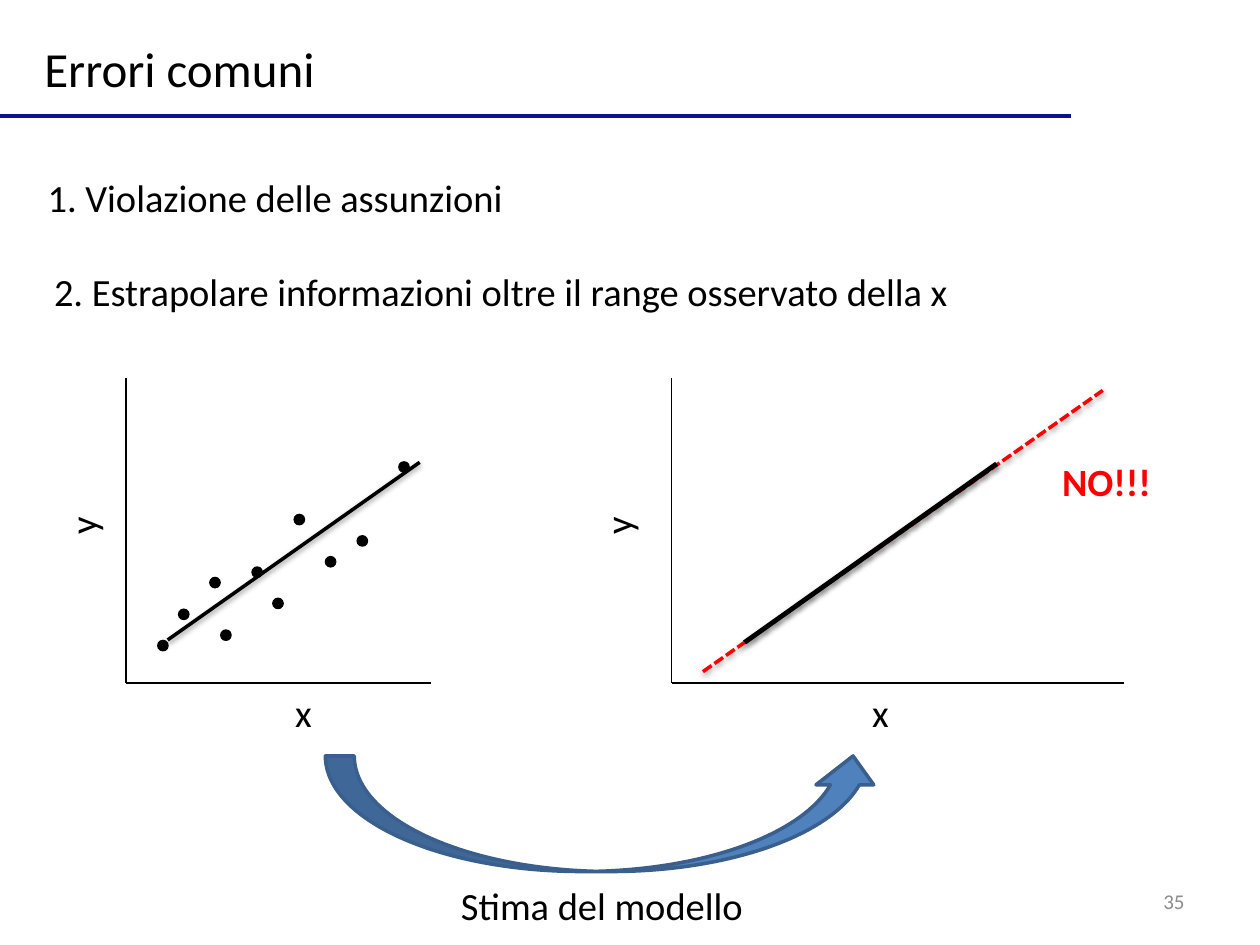
from dataclasses import dataclass

from lxml.etree import SubElement
from pptx import Presentation
from pptx.dml.color import RGBColor
from pptx.enum.dml import MSO_LINE
from pptx.enum.shapes import MSO_CONNECTOR, MSO_SHAPE
from pptx.enum.text import MSO_ANCHOR, MSO_AUTO_SIZE, PP_ALIGN
from pptx.oxml.ns import qn
from pptx.util import Cm, Pt

BLACK, RED = "000000", "FF0000"
AXIS_TOP, AXIS_BOTTOM = 7.62, 13.77
DOT_SIZE = 0.21


@dataclass
class Label:
    text: str
    area: tuple[float, float, float, float]
    size: float = 22
    color: str = BLACK
    bold: bool = False
    align: PP_ALIGN = PP_ALIGN.LEFT
    anchor: MSO_ANCHOR = MSO_ANCHOR.TOP
    wrap: bool = True
    grow: bool = True
    rotation: float = 0


@dataclass
class Line:
    start: tuple[float, float]
    end: tuple[float, float]
    width: float = 0.75
    color: str = BLACK
    dash: MSO_LINE | None = None
    shadow: bool = False


@dataclass
class Plot:
    left: float
    right: float
    x_label_left: float
    y_label_left: float
    lines: list[Line]
    dots: list[tuple[float, float]]


TITLE = Label("Errori comuni", (0.64, 0.64, 6.02, 1.45), size=28, anchor=MSO_ANCHOR.MIDDLE, wrap=False)
RULE = Line((0, 2.34), (21.59, 2.34), width=2, color="0C1290")
LABELS = [
    Label("1. Violazione delle assunzioni", (0.71, 3.38, 12.83, 2.13)),
    Label("2. Estrapolare informazioni oltre il range osservato della x", (0.84, 5.28, 18.72, 1.19), wrap=False),
    Label("NO!!!", (21.16, 9.1, 2.74, 1.19), color=RED, bold=True),
    Label("Stima del modello", (5.72, 17.65, 12.83, 1.19), align=PP_ALIGN.CENTER),
    Label("35", (18.21, 17.65, 5.92, 1.02), size=12, color="8C8C8C", align=PP_ALIGN.RIGHT,
          anchor=MSO_ANCHOR.MIDDLE, grow=False),
]
PLOTS = [
    Plot(2.54, 8.69, 5.69, 1.22,
         [Line((3.38, 12.9), (8.46, 9.32), width=2, shadow=True)],
         [(6.56, 11.22), (5.5, 12.06), (7.2, 10.8), (4.45, 12.7), (5.08, 11.43),
          (4.23, 11.64), (8.04, 9.31), (5.93, 10.37), (3.18, 12.91), (3.6, 12.28)]),
    Plot(13.54, 22.66, 17.32, 12.01,
         [Line((14.17, 13.54), (22.23, 7.87), width=2, color=RED, dash=MSO_LINE.SQUARE_DOT, shadow=True),
          Line((15.01, 12.95), (20.09, 9.35), width=2.75, shadow=True)],
         []),
]


def rgb(value: str) -> RGBColor:
    """Turn a hex string into a colour."""
    return RGBColor.from_string(value)


def set_attributes(target, values: dict) -> None:
    """Set each named attribute on the target."""
    for name, value in values.items():
        setattr(target, name, value)


def write_label(box, label: Label) -> None:
    """Place a box and fill it with formatted text."""
    left, top, width, height = map(Cm, label.area)
    set_attributes(box, {"left": left, "top": top, "width": width, "height": height,
                         "rotation": label.rotation})
    frame = box.text_frame
    set_attributes(frame, {
        "word_wrap": label.wrap,
        "vertical_anchor": label.anchor,
        "auto_size": MSO_AUTO_SIZE.SHAPE_TO_FIT_TEXT if label.grow else MSO_AUTO_SIZE.NONE,
    })
    para = frame.paragraphs[0]
    para.alignment = label.align
    span = para.add_run()
    span.text = label.text
    set_attributes(span.font, {"name": "Calibri", "size": Pt(label.size), "bold": label.bold})
    span.font.color.rgb = rgb(label.color)


def add_label(page, label: Label) -> None:
    """Add a text box for a label."""
    write_label(page.shapes.add_textbox(*map(Cm, label.area)), label)


def add_line(page, line: Line) -> None:
    """Add a straight line with an optional dash and soft shadow."""
    connector = page.shapes.add_connector(MSO_CONNECTOR.STRAIGHT, *map(Cm, line.start + line.end))
    connector.line.color.rgb = rgb(line.color)
    set_attributes(connector.line, {"width": Pt(line.width), "dash_style": line.dash})
    effects = SubElement(connector._element.spPr, qn("a:effectLst"))
    if line.shadow:
        shadow = SubElement(effects, qn("a:outerShdw"), blurRad="40000", dist="20000",
                            dir="5400000", rotWithShape="0")
        color = SubElement(shadow, qn("a:srgbClr"), val=BLACK)
        SubElement(color, qn("a:alpha"), val="38000")


def add_figure(page, kind: MSO_SHAPE, area: tuple[float, float, float, float],
               fill: str, outline: str, width: float) -> None:
    """Add a filled and outlined preset shape."""
    figure = page.shapes.add_shape(kind, *map(Cm, area))
    figure.shadow.inherit = False
    figure.fill.solid()
    figure.fill.fore_color.rgb = rgb(fill)
    figure.line.color.rgb = rgb(outline)
    figure.line.width = Pt(width)


def add_plot(page, plot: Plot) -> None:
    """Draw the axes, lines, dots and axis names of one plot."""
    corner = (plot.left, AXIS_BOTTOM)
    axes = [Line((plot.left, AXIS_TOP), corner), Line((plot.right, AXIS_BOTTOM), corner)]
    for line in axes + plot.lines:
        add_line(page, line)
    for left, top in plot.dots:
        add_figure(page, MSO_SHAPE.OVAL, (left, top, DOT_SIZE, DOT_SIZE), BLACK, BLACK, 0.75)
    for name, left, top, rotation in (("x", plot.x_label_left, AXIS_BOTTOM, 0),
                                      ("y", plot.y_label_left, 10.01, 270)):
        add_label(page, Label(name, (left, top, 0.86, 1.19), align=PP_ALIGN.CENTER,
                              anchor=MSO_ANCHOR.MIDDLE, wrap=False, rotation=rotation))


def main() -> None:
    """Build and save the slide."""
    deck = Presentation()
    set_attributes(deck, {"slide_width": Cm(25.4), "slide_height": Cm(19.05)})
    page = deck.slides.add_slide(deck.slide_layouts.get_by_name("Title Only"))
    write_label(page.shapes.title, TITLE)
    add_line(page, RULE)
    for plot in PLOTS:
        add_plot(page, plot)
    add_figure(page, MSO_SHAPE.CURVED_UP_ARROW, (6.56, 15.24, 11.22, 2.33), "4F81BD", "3A5F8C", 2)
    for label in LABELS:
        add_label(page, label)
    deck.save("out.pptx")


if __name__ == "__main__":
    main()
